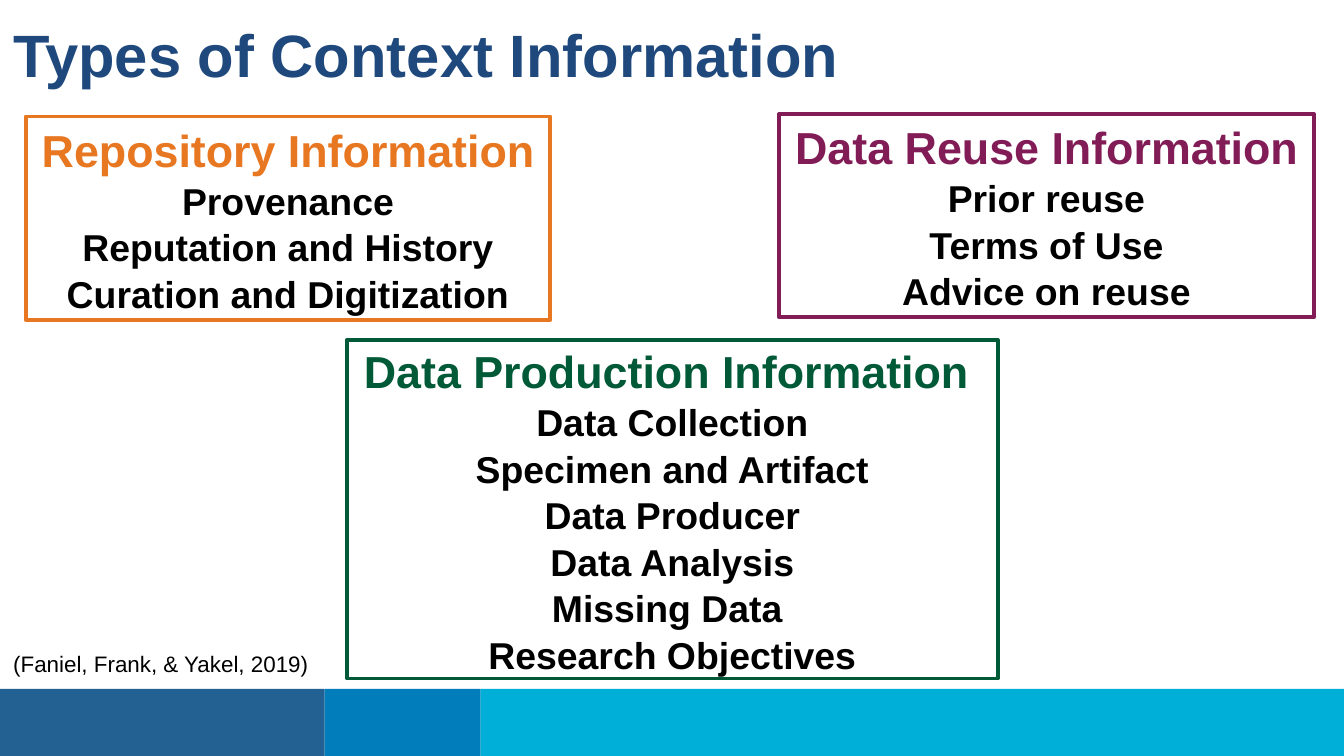
import pptx
import pptx.dml.color
import pptx.enum.shapes
import pptx.enum.text
import pptx.util

Pt = pptx.util.Pt
RGBColor = pptx.dml.color.RGBColor
ANCHOR = pptx.enum.text.MSO_ANCHOR
CENTER = pptx.enum.text.PP_ALIGN.CENTER
RECTANGLE = pptx.enum.shapes.MSO_SHAPE.RECTANGLE

FONT = "Arial"
WHITE = RGBColor(0xFF, 0xFF, 0xFF)
BLACK = RGBColor(0x00, 0x00, 0x00)
TITLE_BLUE = RGBColor(0x1F, 0x49, 0x7D)
ORANGE = RGBColor(0xE8, 0x77, 0x22)
GREEN = RGBColor(0x00, 0x59, 0x37)
PURPLE = RGBColor(0x82, 0x1C, 0x56)
BAND_NAVY = RGBColor(0x23, 0x61, 0x92)
BAND_BLUE = RGBColor(0x00, 0x7D, 0xBA)
BAND_CYAN = RGBColor(0x00, 0xAF, 0xD7)

SLIDE_WIDTH, SLIDE_HEIGHT = 720, 405
BAND_TOP = 369


def style_paragraph(paragraph, text, size, color, bold):
    paragraph.text = text
    font = paragraph.font
    font.name, font.size, font.bold = FONT, Pt(size), bold
    font.color.rgb = color


def add_rectangle(slide, left, top, width, height, fill):
    rectangle = slide.shapes.add_shape(
        RECTANGLE, Pt(left), Pt(top), Pt(width), Pt(height))
    rectangle.shadow.inherit = False
    rectangle.fill.solid()
    rectangle.fill.fore_color.rgb = fill
    rectangle.line.fill.background()
    return rectangle


def add_label(slide, left, top, width, height, text, size, color, bold=False):
    label = slide.shapes.add_textbox(Pt(left), Pt(top), Pt(width), Pt(height))
    frame = label.text_frame
    frame.word_wrap = True
    style_paragraph(frame.paragraphs[0], text, size, color, bold)
    return frame


def add_information_box(slide, left, top, width, height, color, heading, topics):
    box = add_rectangle(slide, left, top, width, height, WHITE)
    box.line.color.rgb = color
    box.line.width = Pt(2)
    frame = box.text_frame
    frame.word_wrap = False
    frame.vertical_anchor = ANCHOR.MIDDLE
    frame.text = "\n".join([heading, *topics])
    for index, paragraph in enumerate(frame.paragraphs):
        size, text_color = (20, BLACK) if index else (24, color)
        style_paragraph(paragraph, paragraph.text, size, text_color, True)
        paragraph.alignment = CENTER
        paragraph.line_spacing = 1.04


def add_footer_band(slide):
    left = 0
    for right, color in ((174, BAND_NAVY), (257.5, BAND_BLUE),
                         (SLIDE_WIDTH, BAND_CYAN)):
        add_rectangle(slide, left, BAND_TOP, right - left,
                      SLIDE_HEIGHT - BAND_TOP, color)
        left = right


def main():
    presentation = pptx.Presentation()
    presentation.slide_width = Pt(SLIDE_WIDTH)
    presentation.slide_height = Pt(SLIDE_HEIGHT)
    slide = presentation.slides.add_slide(presentation.slide_layouts[6])

    add_footer_band(slide)

    # Title
    title = add_label(slide, 0, 2, 664.5, 54, "Types of Context Information",
                      32, TITLE_BLUE, bold=True)
    title.margin_top = Pt(7.5)

    # Three types of context information
    add_information_box(
        slide, 13.8, 62.4, 281, 109, ORANGE, "Repository Information",
        ["Provenance", "Reputation and History", "Curation and Digitization"])
    add_information_box(
        slide, 186, 182, 348.5, 181.5, GREEN, "Data Production Information ",
        ["Data Collection", "Specimen and Artifact", "Data Producer",
         "Data Analysis", "Missing Data ", "Research Objectives"])
    add_information_box(
        slide, 417.4, 61, 286.5, 109, PURPLE, "Data Reuse Information",
        ["Prior reuse", "Terms of Use", "Advice on reuse"])

    # Citation
    add_label(slide, 0, 345, 179.5, 21.8, "(Faniel, Frank, & Yakel, 2019)",
              12, BLACK)

    presentation.save("out.pptx")


if __name__ == "__main__":
    main()
